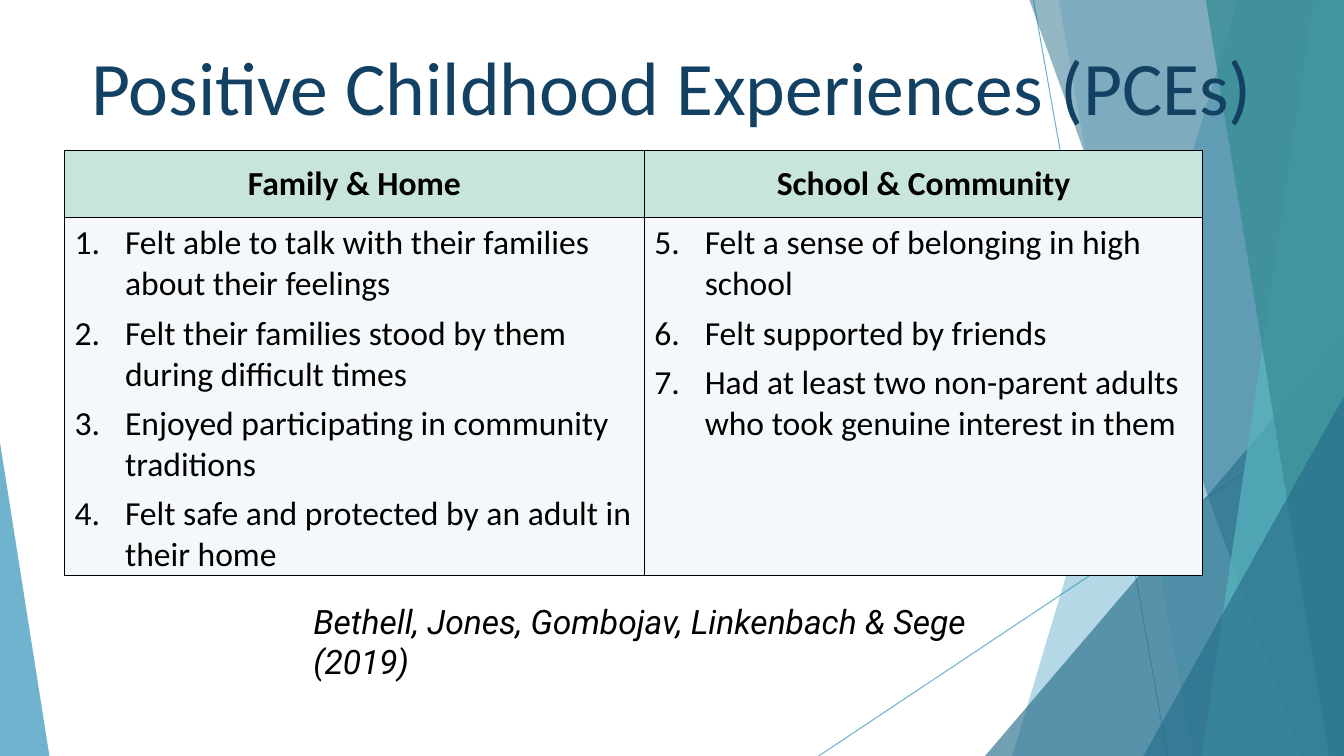
from lxml import etree
from pptx import Presentation
from pptx.dml.color import RGBColor
from pptx.enum.shapes import MSO_CONNECTOR, MSO_SHAPE
from pptx.enum.text import MSO_ANCHOR, PP_ALIGN
from pptx.oxml.ns import qn
from pptx.util import Inches, Pt

LINE = MSO_CONNECTOR.STRAIGHT
TRIANGLE = MSO_SHAPE.ISOSCELES_TRIANGLE
MIDDLE, TOP = MSO_ANCHOR.MIDDLE, MSO_ANCHOR.TOP
CENTER, LEFT = PP_ALIGN.CENTER, PP_ALIGN.LEFT

WIDTH, HEIGHT = 13.33, 7.5
BLUE, DARK_BLUE, AQUA, TEAL = "3494BA", "276F8B", "58B6C0", "3A8F98"
NAVY, BLACK, MINT, PALE = "134163", "000000", "C8E5DC", "F5F8FA"

# Lines: start x, start y, end x, end y
LINES = [(10.25, 0, 11.58, HEIGHT), (WIDTH, 4.03, 8.12, HEIGHT)]
# Bands reaching the right edge: top left x, bottom left x, colour, opacity
BACK_BANDS = [(12.28, 10.04, BLUE, 36), (10.5, 11.83, BLUE, 20)]
FRONT_BANDS = [(10.21, 12.91, DARK_BLUE, 50), (13.03, 11.92, AQUA, 70),
               (11.96, 13.18, TEAL, 80)]

COLUMNS = [
    ("Family & Home", 5.75, 1, [
        "Felt able to talk with their families about their feelings",
        "Felt their families stood by them during difficult times",
        "Enjoyed participating in community traditions",
        "Felt safe and protected by an adult in their home"]),
    ("School & Community", 5.54, 5, [
        "Felt a sense of belonging in high school",
        "Felt supported by friends",
        "Had at least two non-parent adults who took genuine interest in them"]),
]
ROW_HEIGHTS = [0.67, 3.54]

TITLE_FONT = {"name": "Calibri", "size": Pt(54)}
HEADER_FONT = {"name": "Calibri", "size": Pt(24), "bold": True}
ITEM_FONT = {"name": "Calibri", "size": Pt(24), "bold": False}
CITATION_FONT = {"name": "Roboto", "size": Pt(24), "italic": True}


def color(value):
    return RGBColor.from_string(value)


def set_alpha(parent, percent):
    """Set the opacity of the solid colour inside an element."""
    rgb = parent.find(".//" + qn("a:srgbClr"))
    etree.SubElement(rgb, qn("a:alpha"), val=str(percent * 1000))


def paint(shape, fill, opacity):
    shape.shadow.inherit = False
    shape.fill.solid()
    shape.fill.fore_color.rgb = color(fill)
    set_alpha(shape._element.spPr.find(qn("a:solidFill")), opacity)
    shape.line.fill.background()


def add_line(slide, x1, y1, x2, y2):
    connector = slide.shapes.add_connector(
        LINE, Inches(x1), Inches(y1), Inches(x2), Inches(y2))
    connector.line.color.rgb = color(BLUE)
    connector.line.width = Pt(0.75)
    properties = connector._element.spPr
    set_alpha(properties, 70)
    etree.SubElement(properties, qn("a:effectLst"))


def add_band(slide, top_x, bottom_x, fill, opacity):
    builder = slide.shapes.build_freeform(Inches(top_x), 0)
    corners = [(WIDTH, 0), (WIDTH, HEIGHT), (bottom_x, HEIGHT)]
    builder.add_line_segments([(Inches(x), Inches(y)) for x, y in corners])
    paint(builder.convert_to_shape(), fill, opacity)


def add_triangle(slide, left, width, height, apex, fill, opacity):
    """Add a triangle that stands on the bottom edge of the slide."""
    shape = slide.shapes.add_shape(TRIANGLE, Inches(left), Inches(HEIGHT - height),
                                   Inches(width), Inches(height))
    shape.adjustments[0] = apex
    paint(shape, fill, opacity)


def write(paragraph, text, font, font_color=BLACK, alignment=LEFT):
    paragraph.alignment = alignment
    run = paragraph.add_run()
    run.text = text
    for key, value in font.items():
        setattr(run.font, key, value)
    run.font.color.rgb = color(font_color)


def add_text(slide, box, text, font, font_color=BLACK, alignment=LEFT, anchor=TOP):
    frame = slide.shapes.add_textbox(*map(Inches, box)).text_frame
    frame.word_wrap = True
    frame.vertical_anchor = anchor
    write(frame.paragraphs[0], text, font, font_color, alignment)
    return frame


def add_number(paragraph, start):
    properties = paragraph._p.get_or_add_pPr()
    properties.set("marL", str(Inches(0.5)))
    properties.set("indent", str(-Inches(0.5)))
    bullet_color = etree.SubElement(properties, qn("a:buClr"))
    etree.SubElement(bullet_color, qn("a:srgbClr"), val=BLACK)
    etree.SubElement(properties, qn("a:buFont"), typeface="+mj-lt")
    etree.SubElement(properties, qn("a:buAutoNum"),
                     type="arabicPeriod", startAt=str(start))


def style_cell(cell, fill, anchor):
    properties = cell._tc.get_or_add_tcPr()
    for side in ("lnL", "lnR", "lnT", "lnB"):
        border = etree.SubElement(properties, qn("a:" + side), w=str(Pt(1)))
        solid = etree.SubElement(border, qn("a:solidFill"))
        etree.SubElement(solid, qn("a:srgbClr"), val=BLACK)
    cell.fill.solid()
    cell.fill.fore_color.rgb = color(fill)
    cell.vertical_anchor = anchor


def add_experience_table(slide):
    widths = [column[1] for column in COLUMNS]
    table = slide.shapes.add_table(
        len(ROW_HEIGHTS), len(COLUMNS), Inches(0.64), Inches(1.49),
        Inches(sum(widths)), Inches(sum(ROW_HEIGHTS))).table
    table.horz_banding = False
    for row, height in zip(table.rows, ROW_HEIGHTS):
        row.height = Inches(height)
    for index, (heading, width, start, items) in enumerate(COLUMNS):
        table.columns[index].width = Inches(width)
        header, body = table.cell(0, index), table.cell(1, index)
        style_cell(header, MINT, MIDDLE)
        write(header.text_frame.paragraphs[0], heading, HEADER_FONT, alignment=CENTER)
        style_cell(body, PALE, TOP)
        for position, item in enumerate(items):
            frame = body.text_frame
            paragraph = frame.add_paragraph() if position else frame.paragraphs[0]
            add_number(paragraph, start)
            if position:
                paragraph.space_before = Pt(6)
            write(paragraph, item, ITEM_FONT)


def add_backdrop(slide):
    for line in LINES:
        add_line(slide, *line)
    for band in BACK_BANDS:
        add_band(slide, *band)
    add_triangle(slide, 9.77, 3.56, 4.17, 1, DARK_BLUE, 66)
    for band in FRONT_BANDS:
        add_band(slide, *band)
    add_triangle(slide, 11.34, 1.99, 3.57, 1, DARK_BLUE, 66)
    add_triangle(slide, 0, 0.49, 3.11, 0, BLUE, 70)


def main():
    presentation = Presentation()
    presentation.slide_width = Inches(WIDTH)
    presentation.slide_height = Inches(HEIGHT)
    slide = presentation.slides.add_slide(presentation.slide_layouts[6])

    # Decorative facets
    add_backdrop(slide)

    # Title
    title = add_text(slide, (0, 0.1, WIDTH, 1.61), "Positive Childhood Experiences (PCEs)",
                     TITLE_FONT, NAVY, CENTER, MIDDLE)
    title.paragraphs[0].line_spacing = 0.9

    # Table and its citation
    add_experience_table(slide)
    add_text(slide, (3.01, 5.91, 7.32, 0.5),
             "Bethell, Jones, Gombojav, Linkenbach & Sege (2019)", CITATION_FONT)

    presentation.save("out.pptx")


if __name__ == "__main__":
    main()
